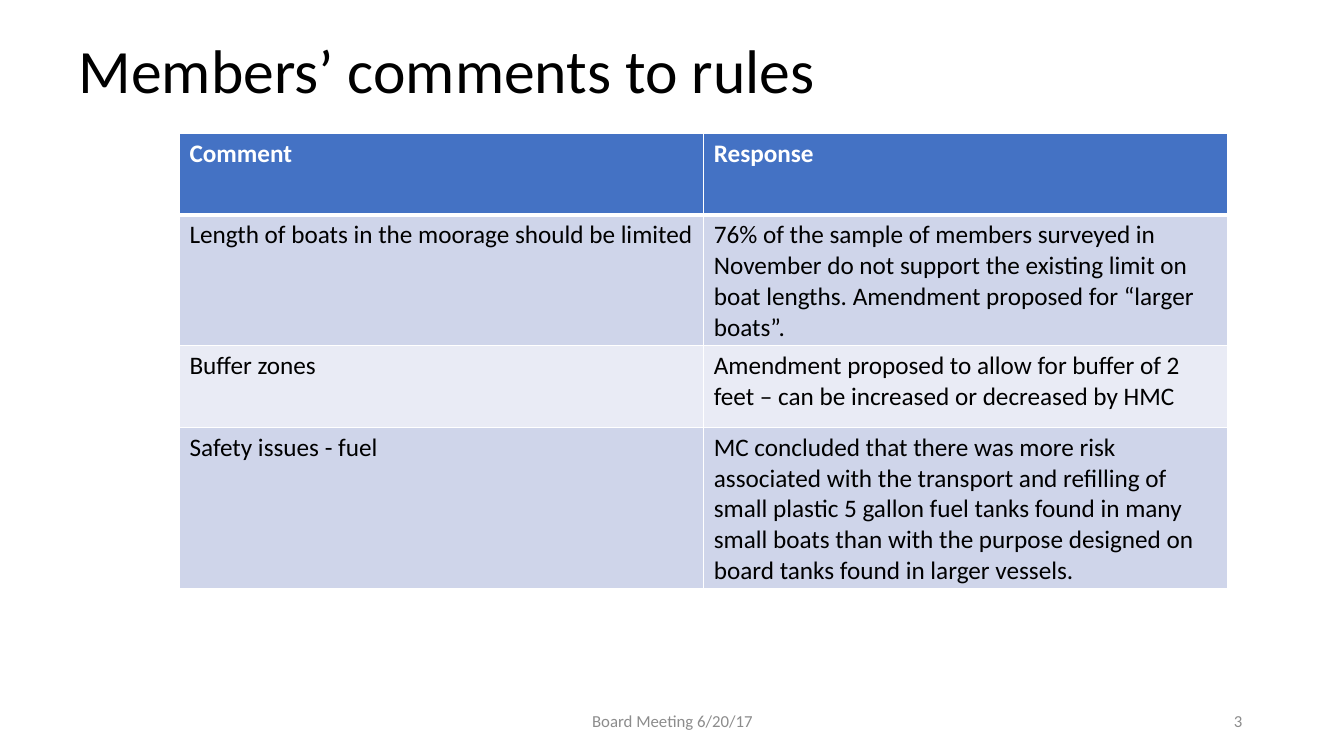
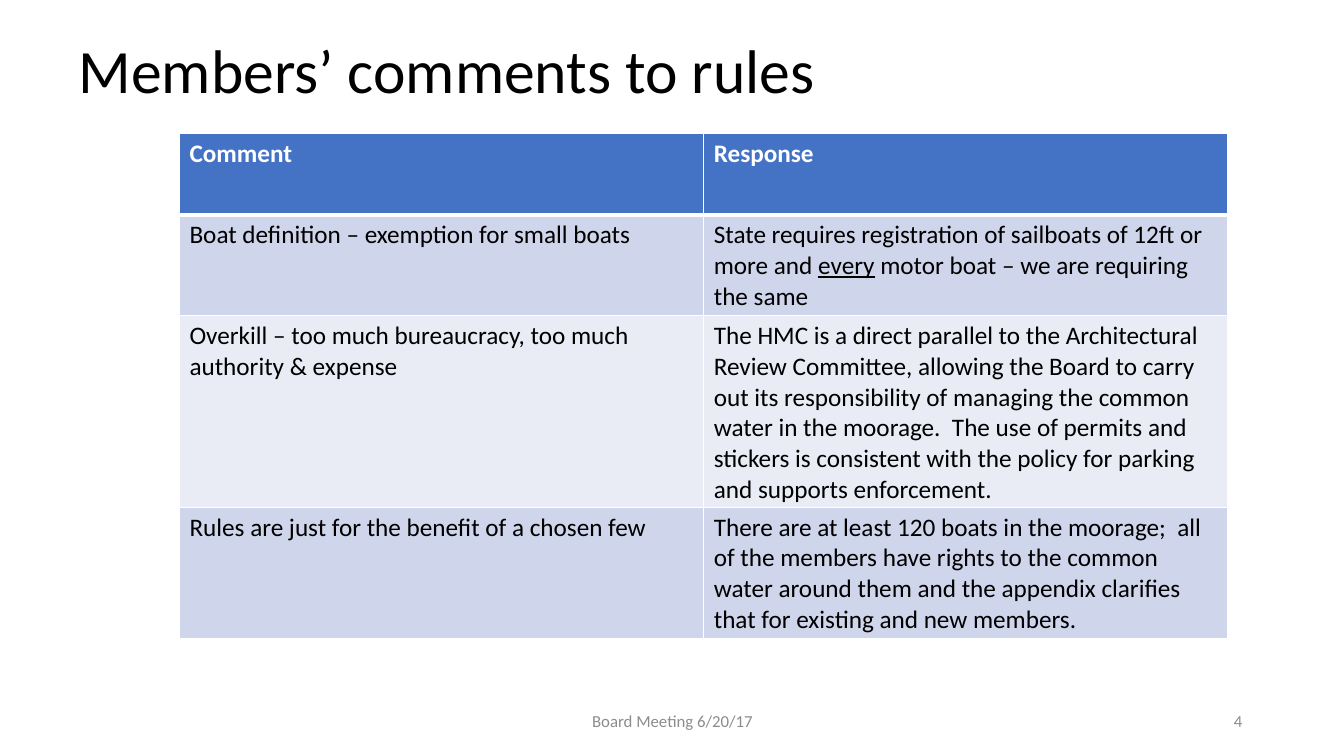
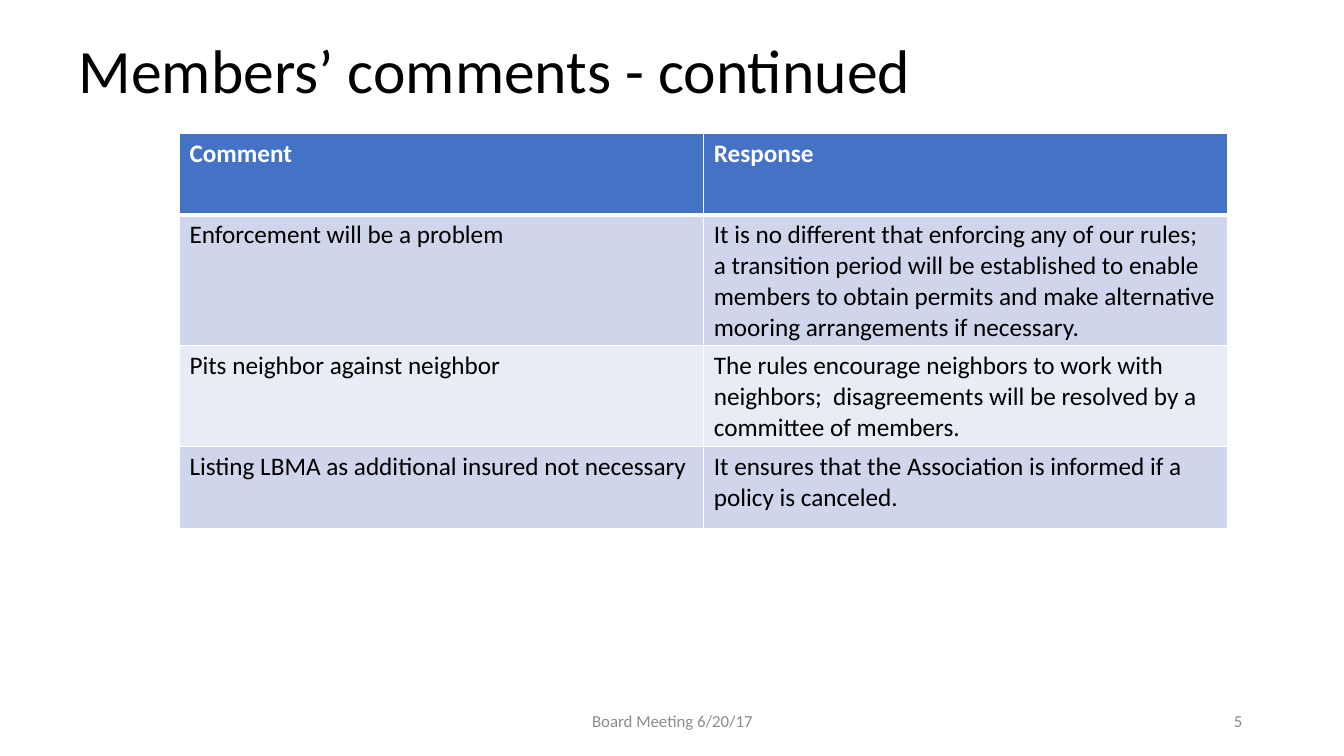
from dataclasses import dataclass

from lxml.etree import SubElement
from pptx import Presentation
from pptx.dml.color import RGBColor
from pptx.enum.text import MSO_ANCHOR, PP_ALIGN
from pptx.oxml.ns import qn
from pptx.slide import Slide
from pptx.table import _Cell
from pptx.text.text import Font
from pptx.util import Emu, Pt

EMU_PER_PX = 9144  # 100 px to the inch
FONT = "Calibri"
BLACK = RGBColor(0x00, 0x00, 0x00)
WHITE = RGBColor(0xFF, 0xFF, 0xFF)
GREY = RGBColor(0x8C, 0x8C, 0x8C)
HEADER_BLUE = RGBColor(0x44, 0x72, 0xC4)
BAND_FILLS = (RGBColor(0xCF, 0xD5, 0xEA), RGBColor(0xE9, 0xEB, 0xF5))

TITLE_ONLY_LAYOUT = 5
FIRST_PAGE_NUMBER = 3
FOOTER = "Board Meeting 6/20/17"
HEADINGS = ("Comment", "Response")
COLUMN_WIDTH = 520
ROW_HEIGHT = 81
THIN, THICK = 1, 3


@dataclass(frozen=True)
class Box:
    left: int
    top: int
    width: int
    height: int

    def emu(self) -> tuple[Emu, Emu, Emu, Emu]:
        return (px(self.left), px(self.top), px(self.width), px(self.height))


@dataclass(frozen=True)
class Remark:
    comment: str
    response: str
    underlined: str = ""


@dataclass(frozen=True)
class Page:
    title: str
    remarks: tuple[Remark, ...]


TITLE_BOX = Box(68, 0, 1150, 145)
FOOTER_BOX = Box(442, 695, 450, 40)
NUMBER_BOX = Box(942, 695, 300, 40)

PAGES = (
    Page("Members’ comments to rules", (
        Remark("Length of boats in the moorage should be limited",
               "76% of the sample of members surveyed in November do not support the "
               "existing limit on boat lengths. Amendment proposed for “larger boats”."),
        Remark("Buffer zones",
               "Amendment proposed to allow for buffer of 2 feet – can be increased or "
               "decreased by HMC"),
        Remark("Safety issues - fuel",
               "MC concluded that there was more risk associated with the transport and "
               "refilling of small plastic 5 gallon fuel tanks found in many small boats "
               "than with the purpose designed on board tanks found in larger vessels."),
    )),
    Page("Members’ comments to rules", (
        Remark("Boat definition – exemption for small boats",
               "State requires registration of sailboats of 12ft or more and every motor "
               "boat – we are requiring the same",
               underlined="every"),
        Remark("Overkill – too much bureaucracy, too much authority & expense",
               "The HMC is a direct parallel to the Architectural Review Committee, "
               "allowing the Board to carry out its responsibility of managing the common "
               "water in the moorage.  The use of permits and stickers is consistent with "
               "the policy for parking and supports enforcement."),
        Remark("Rules are just for the benefit of a chosen few",
               "There are at least 120 boats in the moorage;  all of the members have "
               "rights to the common water around them and the appendix clarifies that "
               "for existing and new members."),
    )),
    Page("Members’ comments - continued", (
        Remark("Enforcement will be a problem",
               "It is no different that enforcing any of our rules;  a transition period "
               "will be established to enable members to obtain permits and make "
               "alternative mooring arrangements if necessary."),
        Remark("Pits neighbor against neighbor",
               "The rules encourage neighbors to work with neighbors;  disagreements will "
               "be resolved by a committee of members."),
        Remark("Listing LBMA as additional insured not necessary",
               "It ensures that the Association is informed if a policy is canceled."),
    )),
)


def px(length: int) -> Emu:
    return Emu(length * EMU_PER_PX)


def style_font(font: Font, size: int, color: RGBColor, bold: bool = False) -> None:
    font.name = FONT
    font.size = Pt(size)
    font.bold = bold
    font.color.rgb = color


def add_title(slide: Slide, text: str) -> None:
    title = slide.shapes.title
    title.left, title.top, title.width, title.height = TITLE_BOX.emu()
    title.text_frame.text = text
    title.text_frame.vertical_anchor = MSO_ANCHOR.MIDDLE
    para = title.text_frame.paragraphs[0]
    para.alignment = PP_ALIGN.LEFT
    para.line_spacing = 0.9
    style_font(para.runs[0].font, 44, BLACK)


def add_footer_text(slide: Slide, box: Box, text: str, alignment: PP_ALIGN) -> None:
    frame = slide.shapes.add_textbox(*box.emu()).text_frame
    frame.word_wrap = True
    frame.vertical_anchor = MSO_ANCHOR.MIDDLE
    frame.text = text
    para = frame.paragraphs[0]
    para.alignment = alignment
    style_font(para.runs[0].font, 12, GREY)


def set_borders(cell: _Cell, top: int, bottom: int) -> None:
    """Draw white borders; must run before the fill, which follows them in the XML."""
    properties = cell._tc.get_or_add_tcPr()
    for tag, width in (("lnL", THIN), ("lnR", THIN), ("lnT", top), ("lnB", bottom)):
        line = SubElement(properties, qn(f"a:{tag}"), w=str(Pt(width)))
        fill = SubElement(line, qn("a:solidFill"))
        SubElement(fill, qn("a:srgbClr"), val=str(WHITE))


def fill_cell(cell: _Cell, text: str, row: int, underlined: str = "") -> None:
    is_header = row == 0
    set_borders(cell, THICK if row == 1 else THIN, THICK if is_header else THIN)
    cell.fill.solid()
    cell.fill.fore_color.rgb = HEADER_BLUE if is_header else BAND_FILLS[(row - 1) % 2]
    para = cell.text_frame.paragraphs[0]
    pieces = text.partition(underlined) if underlined else (text,)
    for piece in pieces:
        span = para.add_run()
        span.text = piece
        style_font(span.font, 18, WHITE if is_header else BLACK, is_header)
        if piece == underlined:
            span.font.underline = True


def add_remark_table(slide: Slide, remarks: tuple[Remark, ...]) -> None:
    row_count = len(remarks) + 1
    box = Box(178, 132, COLUMN_WIDTH * len(HEADINGS), ROW_HEIGHT * row_count)
    table = slide.shapes.add_table(row_count, len(HEADINGS), *box.emu()).table
    for column, heading in enumerate(HEADINGS):
        fill_cell(table.cell(0, column), heading, 0)
    for row, remark in enumerate(remarks, start=1):
        fill_cell(table.cell(row, 0), remark.comment, row)
        fill_cell(table.cell(row, 1), remark.response, row, remark.underlined)


def main() -> None:
    deck = Presentation()
    deck.slide_width, deck.slide_height = px(1333), px(750)
    for number, page in enumerate(PAGES, start=FIRST_PAGE_NUMBER):
        slide = deck.slides.add_slide(deck.slide_layouts[TITLE_ONLY_LAYOUT])
        add_title(slide, page.title)
        add_footer_text(slide, FOOTER_BOX, FOOTER, PP_ALIGN.CENTER)
        add_footer_text(slide, NUMBER_BOX, str(number), PP_ALIGN.RIGHT)
        add_remark_table(slide, page.remarks)
    deck.save("out.pptx")


if __name__ == "__main__":
    main()
